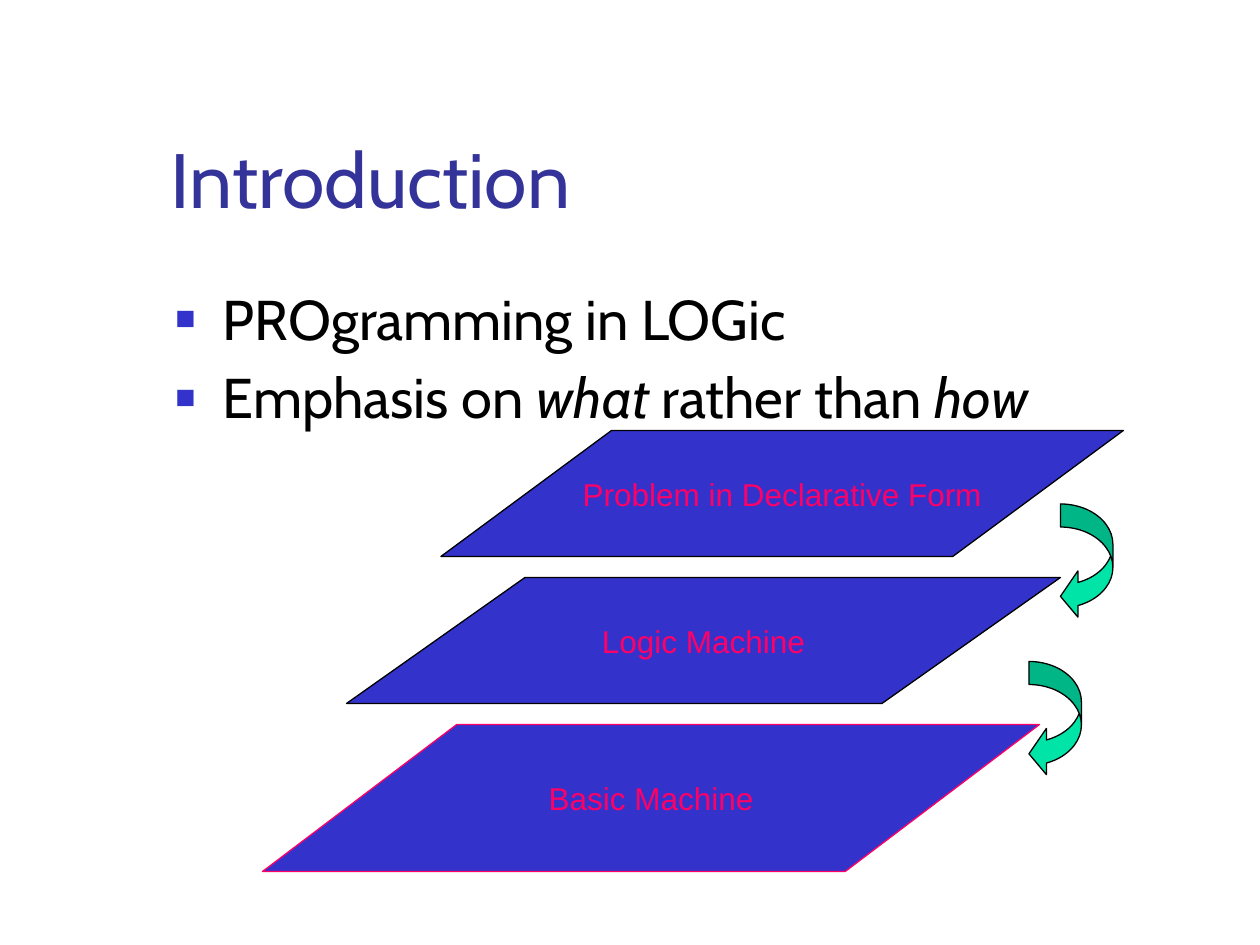
from lxml import etree
from pptx import Presentation
from pptx.dml.color import RGBColor
from pptx.enum.shapes import MSO_SHAPE
from pptx.enum.text import MSO_ANCHOR, MSO_AUTO_SIZE, PP_ALIGN
from pptx.oxml.ns import qn
from pptx.util import Pt

PARALLELOGRAM = MSO_SHAPE.PARALLELOGRAM
CURVED_ARROW = MSO_SHAPE.CURVED_LEFT_ARROW
LEFT, CENTER = PP_ALIGN.LEFT, PP_ALIGN.CENTER
TOP, MIDDLE, BOTTOM = MSO_ANCHOR.TOP, MSO_ANCHOR.MIDDLE, MSO_ANCHOR.BOTTOM
NO_AUTOFIT = MSO_AUTO_SIZE.NONE

THEME = {
    "heading_font": "Cabin", "label_font": "Arial",
    "title_size": 44, "body_size": 32, "label_size": 18,
    "title": "333399", "body": "000000", "bullet": "3333CC",
    "layer": "3333CC", "label": "FF0066", "arrow": "00E4A8",
    "outline": "000000", "outline_width": 0.75,
}

TITLE = "Introduction"
# Each bullet is a list of (words, italic)
BULLETS = [
    [("PROgramming in LOGic", False)],
    [("Emphasis on ", False), ("what ", True),
     ("rather than ", False), ("how", True)],
]
# Label, (left, top, width, height), outline colour
LAYERS = [
    ("Basic Machine", (150, 414, 444, 84), "label"),
    ("Logic Machine", (198, 330, 408, 72), "outline"),
    ("Problem in Declarative Form", (252, 246, 390, 72), "outline"),
]
ARROW_CORNERS = [(606, 288), (588, 378)]
ARROW_SIZE = (30, 66)
ARROW_ADJUSTMENTS = (0.44, 0.88, 0.333)
TITLE_BOX = (90.5, 16.5, 613.5, 115)
BODY_BOX = (93, 159, 612, 324)
BULLET_INDENT = 27
LAYER_SLANT = 0.25  # share of the width taken by the sloping side


def color(role):
    return RGBColor.from_string(THEME[role])


def style_font(font, family, size, role):
    font.name = THEME[family]
    font.size = Pt(THEME[size])
    font.color.rgb = color(role)


def place(placeholder, box, anchor):
    placeholder.left, placeholder.top, placeholder.width, placeholder.height = map(Pt, box)
    frame = placeholder.text_frame
    frame.auto_size = NO_AUTOFIT
    frame.word_wrap = True
    frame.vertical_anchor = anchor
    return frame


def add_square_bullet(paragraph):
    properties = paragraph._p.get_or_add_pPr()
    properties.set("marL", str(Pt(BULLET_INDENT)))
    properties.set("indent", str(-Pt(BULLET_INDENT)))
    bullet_color = etree.SubElement(properties, qn("a:buClr"))
    etree.SubElement(bullet_color, qn("a:srgbClr"), val=THEME["bullet"])
    etree.SubElement(properties, qn("a:buSzPct"), val="60000")
    etree.SubElement(properties, qn("a:buFont"), typeface=THEME["label_font"])
    etree.SubElement(properties, qn("a:buChar"), char="■")


def add_solid(slide, kind, box, fill, outline, adjustments):
    solid = slide.shapes.add_shape(kind, *map(Pt, box))
    solid.shadow.inherit = False
    solid.fill.solid()
    solid.fill.fore_color.rgb = color(fill)
    solid.line.color.rgb = color(outline)
    solid.line.width = Pt(THEME["outline_width"])
    for index, value in enumerate(adjustments):
        solid.adjustments[index] = value
    return solid


def add_layer(slide, label, box, outline):
    width, height = box[2:]
    layer = add_solid(slide, PARALLELOGRAM, box, "layer", outline,
                      [LAYER_SLANT * width / height])
    frame = layer.text_frame
    frame.word_wrap = False
    frame.vertical_anchor = MIDDLE
    paragraph = frame.paragraphs[0]
    paragraph.text = label
    paragraph.alignment = CENTER
    style_font(paragraph.font, "label_font", "label_size", "label")


def main():
    deck = Presentation()
    deck.slide_width, deck.slide_height = Pt(720), Pt(540)
    slide = deck.slides.add_slide(deck.slide_layouts[1])

    heading = place(slide.shapes.title, TITLE_BOX, BOTTOM).paragraphs[0]
    heading.text = TITLE
    heading.alignment = LEFT
    style_font(heading.font, "heading_font", "title_size", "title")

    body = place(slide.placeholders[1], BODY_BOX, TOP)
    for index, pieces in enumerate(BULLETS):
        point = body.add_paragraph() if index else body.paragraphs[0]
        add_square_bullet(point)
        style_font(point.font, "heading_font", "body_size", "body")
        for words, italic in pieces:
            run = point.add_run()
            run.text = words
            run.font.italic = italic

    for label, box, outline in LAYERS:
        add_layer(slide, label, box, outline)
    for corner in ARROW_CORNERS:
        add_solid(slide, CURVED_ARROW, corner + ARROW_SIZE, "arrow", "outline",
                  ARROW_ADJUSTMENTS)

    deck.save("out.pptx")


if __name__ == "__main__":
    main()
